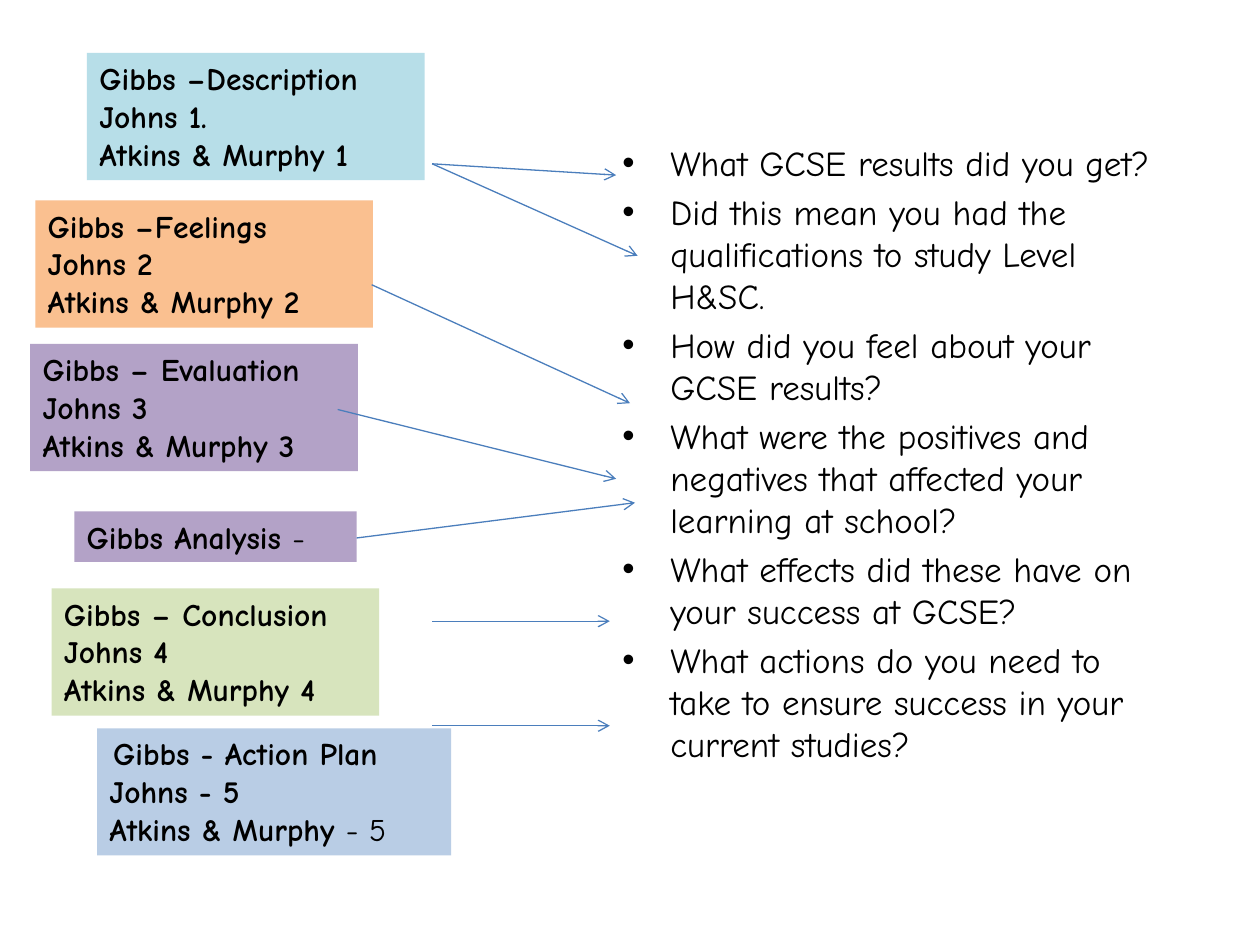
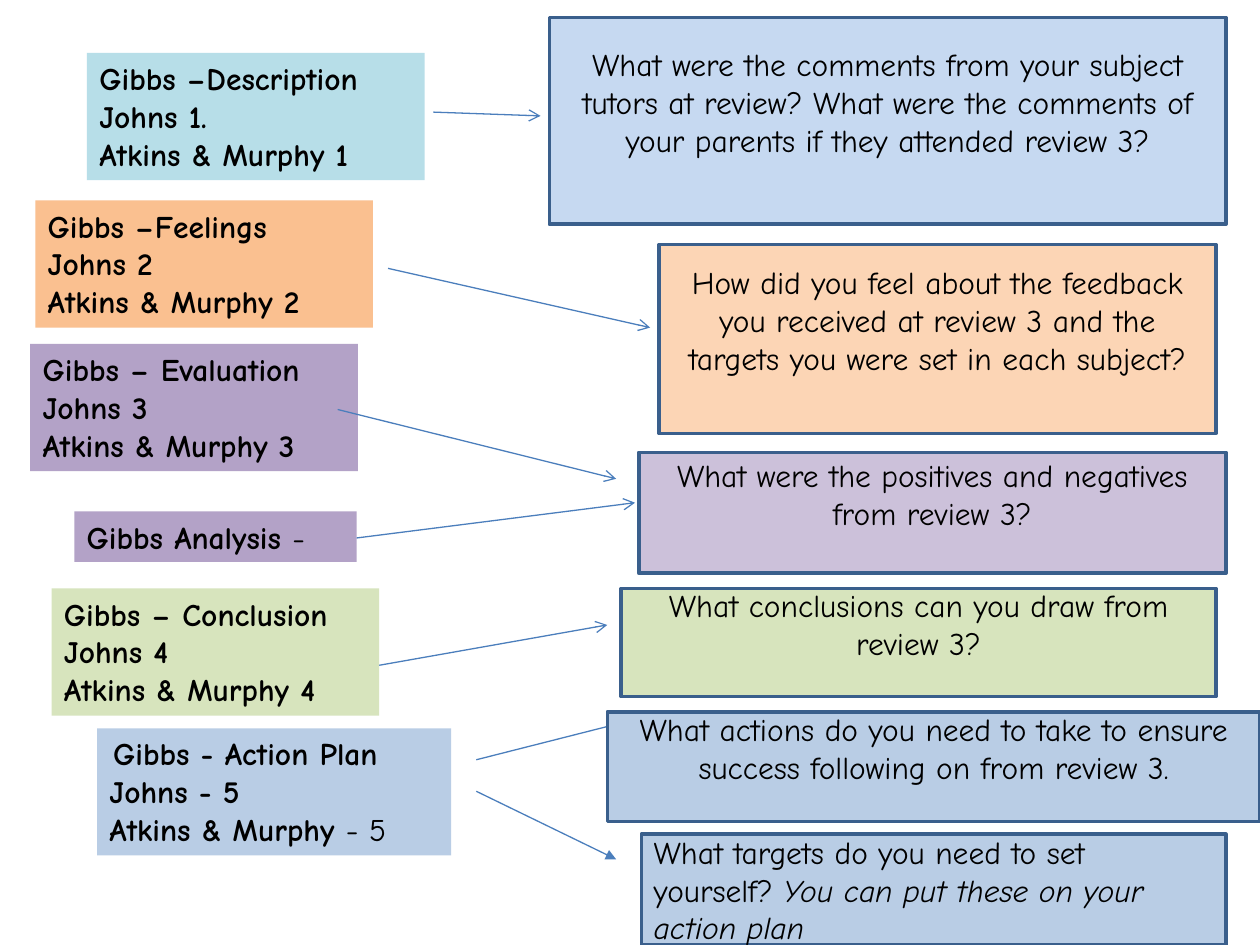
from lxml import etree
from pptx import Presentation
from pptx.dml.color import RGBColor
from pptx.enum.shapes import MSO_CONNECTOR, MSO_SHAPE
from pptx.enum.text import MSO_ANCHOR, MSO_AUTO_SIZE, PP_ALIGN
from pptx.oxml.ns import qn
from pptx.util import Inches, Pt

RECTANGLE = MSO_SHAPE.RECTANGLE
STRAIGHT = MSO_CONNECTOR.STRAIGHT
TOP, MIDDLE = MSO_ANCHOR.TOP, MSO_ANCHOR.MIDDLE
LEFT, CENTER = PP_ALIGN.LEFT, PP_ALIGN.CENTER
GROW = MSO_AUTO_SIZE.SHAPE_TO_FIT_TEXT

FONT = "Comic Neue"
TEXT, ARROW, OUTLINE = "000000", "4B7EBC", "3A5F8C"
AQUA, ORANGE, PURPLE, GREEN, BLUE = "B7DEE8", "FAC090", "B3A2C7", "D7E4BD", "B9CDE5"
PALE_BLUE, PALE_ORANGE, PALE_PURPLE = "C6D9F1", "FCD5B5", "CCC1DA"
TEXT_SIZE, BULLET_SIZE = 18, 20
BULLET_INDENT = 0.38
LINE_HEIGHT = 0.3
INSET = 0.05

STAGES = [
    ((0.69, 0.42, 2.68, 1.01), AQUA,
     [("Gibbs –Description", ""), ("Johns 1.", ""), ("Atkins & Murphy 1", "")]),
    ((0.28, 1.59, 2.68, 1.01), ORANGE,
     [("Gibbs –Feelings", ""), ("Johns 2", ""), ("Atkins & Murphy 2", "")]),
    ((0.24, 2.73, 2.6, 1.01), PURPLE,
     [("Gibbs – Evaluation", ""), ("Johns 3", ""), ("Atkins & Murphy 3", "")]),
    ((0.59, 4.06, 2.24, 0.4), PURPLE, [("Gibbs Analysis ", "-")]),
    ((0.41, 4.67, 2.6, 1.01), GREEN,
     [("Gibbs – Conclusion", ""), ("Johns 4", ""), ("Atkins & Murphy 4", "")]),
    ((0.77, 5.78, 2.81, 1.01), BLUE,
     [("Gibbs - Action Plan", ""), ("Johns - 5", ""), ("Atkins & Murphy ", "- 5")]),
]
ACTION_PLAN_INDENT = 0.03

SCHOOL_QUESTIONS_BOX = (4.84, 1.07, 4.42, 4.95)
SCHOOL_QUESTIONS = [
    "What GCSE results did you get?",
    "Did this mean you had the qualifications to study Level H&SC.",
    "How did you feel about your GCSE results?",
    "What were the positives and negatives that affected your learning at school?",
    "What effects did these have on your success at GCSE?",
    "What actions do you need to take to ensure success in your current studies?",
]

REVIEW_QUESTIONS = [
    ((4.36, 0.14, 5.37, 1.64), PALE_BLUE,
     "What were the comments from your subject tutors at review? "
     "What were the comments of your parents if they attended review 3?"),
    ((5.23, 1.94, 4.42, 1.5), PALE_ORANGE,
     "How did you feel about the feedback you received at review 3 "
     "and the targets you were set in each subject?"),
    ((5.07, 3.59, 4.66, 0.96), PALE_PURPLE,
     "What were the positives and negatives from review 3?"),
    ((4.93, 4.67, 4.72, 0.86), GREEN,
     "What conclusions can you draw from review 3?"),
    ((4.82, 5.65, 5.18, 0.87), BLUE,
     "What actions do you need to take to ensure success following on from review 3."),
]
TARGETS_BOX = (5.09, 6.62, 4.64, 0.88)
TARGETS_QUESTION = "What targets do you need to set yourself? "
TARGETS_HINT = "You can put these on your action plan"

SHARED_ARROWS = [
    ((2.68, 3.25), (4.89, 3.8), "arrow"),
    ((2.83, 4.27), (5.04, 3.99), "arrow"),
]
SCHOOL_ARROWS = [
    ((3.43, 1.3), (4.89, 1.39), "arrow"),
    ((3.43, 1.3), (5.06, 2.03), "arrow"),
    ((2.95, 2.26), (5, 3.2), "arrow"),
    *SHARED_ARROWS,
    ((3.43, 4.93), (4.84, 4.93), "arrow"),
    ((3.43, 5.76), (4.84, 5.76), "arrow"),
]
REVIEW_ARROWS = [
    ((3.44, 0.89), (4.29, 0.92), "arrow"),
    ((3.08, 2.13), (5.16, 2.6), "arrow"),
    *SHARED_ARROWS,
    ((3.01, 5.28), (4.82, 4.96), "arrow"),
    ((3.78, 6.03), (5.2, 5.67), "arrow"),
    ((3.78, 6.28), (4.89, 6.82), "triangle"),
]


def color(value):
    return RGBColor.from_string(value)


def inches(values):
    return [Inches(value) for value in values]


def style_paragraph(paragraph, size=TEXT_SIZE, bold=False, alignment=LEFT):
    paragraph.alignment = alignment
    font = paragraph.font
    font.name, font.size, font.bold = FONT, Pt(size), bold
    font.color.rgb = color(TEXT)


def set_indent(paragraph, margin, first_line):
    properties = paragraph._p.get_or_add_pPr()
    properties.set("marL", str(Inches(margin)))
    properties.set("indent", str(Inches(first_line)))


def add_box(slide, box, fill, anchor):
    shape = slide.shapes.add_shape(RECTANGLE, *inches(box))
    shape.shadow.inherit = False
    shape.fill.solid()
    shape.fill.fore_color.rgb = color(fill)
    shape.line.fill.background()
    shape.text_frame.word_wrap = True
    shape.text_frame.vertical_anchor = anchor
    return shape


def add_stages(slide):
    for box, fill, lines in STAGES:
        frame = add_box(slide, box, fill, TOP).text_frame
        frame.auto_size = GROW
        for index, (strong, plain) in enumerate(lines):
            paragraph = frame.paragraphs[0] if index == 0 else frame.add_paragraph()
            style_paragraph(paragraph, bold=True)
            paragraph.add_run().text = strong
            if plain:
                run = paragraph.add_run()
                run.text = plain
                run.font.bold = False
    set_indent(frame.paragraphs[0], 0, ACTION_PLAN_INDENT)


def add_arrows(slide, arrows):
    for start, end, head in arrows:
        connector = slide.shapes.add_connector(STRAIGHT, *inches(start + end))
        connector.line.color.rgb = color(ARROW)
        connector.line.width = Pt(0.75)
        line = connector.line._get_or_add_ln()
        etree.SubElement(line, qn("a:tailEnd"), type=head)
        etree.SubElement(connector._element.spPr, qn("a:effectLst"))


def add_question(slide, box, fill, text, alignment=CENTER):
    shape = add_box(slide, box, fill, MIDDLE)
    shape.line.color.rgb = color(OUTLINE)
    shape.line.width = Pt(2)
    paragraph = shape.text_frame.paragraphs[0]
    style_paragraph(paragraph, alignment=alignment)
    paragraph.add_run().text = text
    return shape.text_frame


def build_school_slide(presentation):
    slide = presentation.slides.add_slide(presentation.slide_layouts[1])
    title = slide.shapes.title._element
    title.getparent().remove(title)
    body = slide.placeholders[1]
    body.left, body.top, body.width, body.height = inches(SCHOOL_QUESTIONS_BOX)
    frame = body.text_frame
    frame.text = "\n".join(SCHOOL_QUESTIONS)
    for paragraph in frame.paragraphs:
        style_paragraph(paragraph, size=BULLET_SIZE)
        set_indent(paragraph, BULLET_INDENT, -BULLET_INDENT)
    add_stages(slide)
    add_arrows(slide, SCHOOL_ARROWS)


def build_review_slide(presentation):
    slide = presentation.slides.add_slide(presentation.slide_layouts[6])
    add_stages(slide)
    add_arrows(slide, REVIEW_ARROWS)
    for box, fill, text in REVIEW_QUESTIONS:
        frame = add_question(slide, box, fill, text)
        frame.margin_bottom = Inches(INSET + LINE_HEIGHT)
    frame = add_question(slide, TARGETS_BOX, BLUE, TARGETS_QUESTION, LEFT)
    hint = frame.paragraphs[0].add_run()
    hint.text = TARGETS_HINT
    hint.font.italic = True


def main():
    presentation = Presentation()
    presentation.slide_width, presentation.slide_height = Inches(10), Inches(7.5)
    build_school_slide(presentation)
    build_review_slide(presentation)
    presentation.save("out.pptx")


if __name__ == "__main__":
    main()
